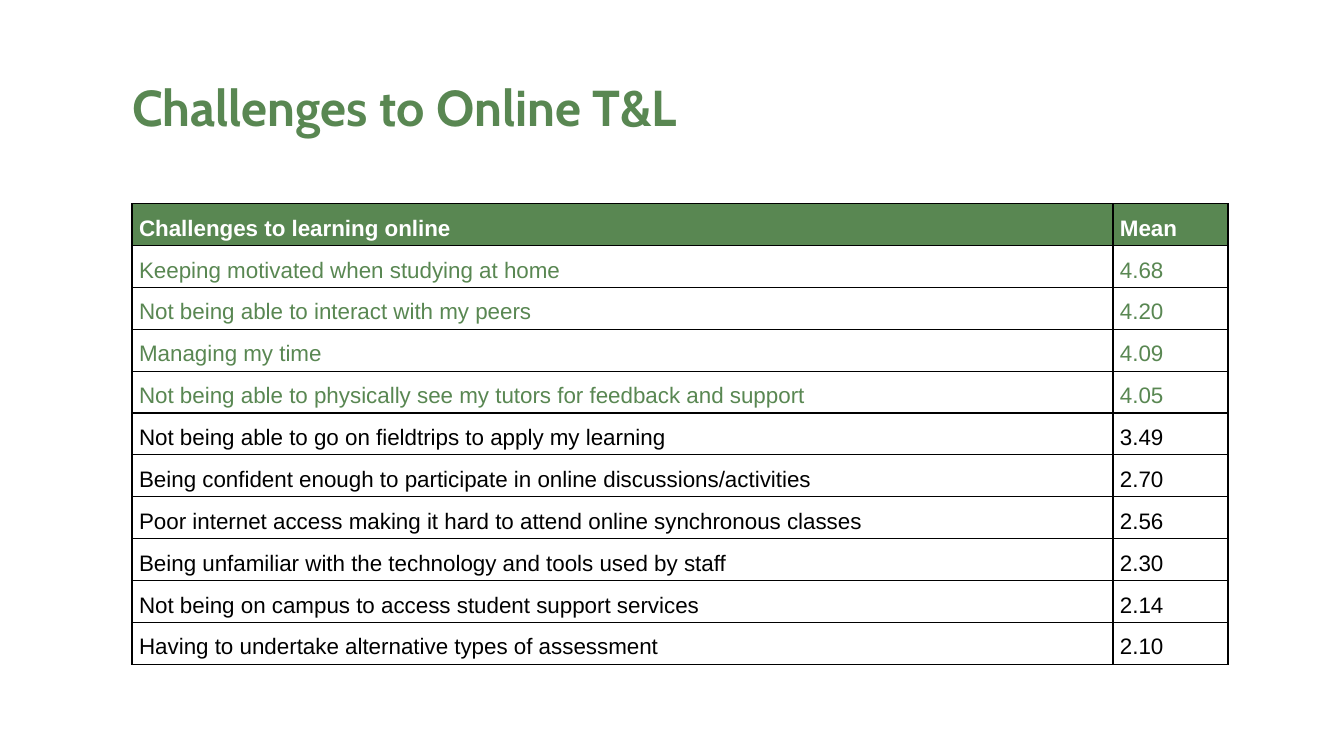
from lxml import etree
from pptx import Presentation, util as u
from pptx.dml.color import RGBColor
from pptx.enum import text
from pptx.oxml.ns import qn

COLORS = {"green": "598752", "white": "FFFFFF", "black": "000000"}
TITLE = "Challenges to Online T&L"
HEADER = ("Challenges to learning online", "Mean")
CHALLENGES = [
    ("Keeping motivated when studying at home", "4.68"),
    ("Not being able to interact with my peers", "4.20"),
    ("Managing my time", "4.09"),
    ("Not being able to physically see my tutors for feedback and support", "4.05"),
    ("Not being able to go on fieldtrips to apply my learning", "3.49"),
    ("Being confident enough to participate in online discussions/activities", "2.70"),
    ("Poor internet access making it hard to attend online synchronous classes", "2.56"),
    ("Being unfamiliar with the technology and tools used by staff", "2.30"),
    ("Not being on campus to access student support services", "2.14"),
    ("Having to undertake alternative types of assessment", "2.10"),
]
HIGHLIGHTED = 4
MEAN_SHARE = 0.105


def apply(obj, **values):
    for name, value in values.items():
        setattr(obj, name, value)


def style(font, color, **values):
    apply(font, **values)
    font.color.rgb = RGBColor.from_string(COLORS[color])


def add_title(s, left, top, width, height):
    sp = s.shapes.title
    apply(sp, left=left, top=top, width=width, height=height)
    tf = sp.text_frame
    apply(tf, margin_left=0, margin_top=0, margin_right=0, margin_bottom=0,
          word_wrap=True, vertical_anchor=text.MSO_ANCHOR.TOP,
          auto_size=text.MSO_AUTO_SIZE.NONE)
    p = tf.paragraphs[0]
    p.alignment = text.PP_ALIGN.LEFT
    r = p.add_run()
    r.text = TITLE
    style(r.font, "green", name="Cabin", size=u.Pt(36), bold=True)


def add_borders(cell):
    tcPr = cell._tc.get_or_add_tcPr()
    for i, side in enumerate(("lnL", "lnR", "lnT", "lnB")):
        ln = etree.Element(qn(f"a:{side}"), w=str(u.Pt(1)))
        fill = etree.SubElement(ln, qn("a:solidFill"))
        etree.SubElement(fill, qn("a:srgbClr"), val=COLORS["black"])
        tcPr.insert(i, ln)


def fill_cell(cell, words, color, header):
    apply(cell, margin_left=u.Inches(0.07), margin_right=u.Inches(0.07),
          margin_top=0, margin_bottom=0, vertical_anchor=text.MSO_ANCHOR.TOP)
    if header:
        cell.fill.solid()
        cell.fill.fore_color.rgb = RGBColor.from_string(COLORS["green"])
    else:
        cell.fill.background()
    add_borders(cell)
    p = cell.text_frame.paragraphs[0]
    p.line_spacing = 1.5
    r = p.add_run()
    r.text = words
    style(r.font, color, name="Arial", size=u.Pt(16), bold=header)


def add_challenges(s, left, top, width, height):
    rows = [HEADER] + CHALLENGES
    table = s.shapes.add_table(len(rows), len(HEADER), left, top, width, height).table
    table.horz_banding = False
    mean_width = int(width * MEAN_SHARE)
    for column, column_width in zip(table.columns, (width - mean_width, mean_width)):
        column.width = column_width
    for i, values in enumerate(rows):
        table.rows[i].height = height // len(rows)
        color = "white" if i == 0 else "green" if i <= HIGHLIGHTED else "black"
        for j, words in enumerate(values):
            fill_cell(table.cell(i, j), words, color, i == 0)


def main():
    prs = Presentation()
    apply(prs, slide_width=u.Inches(13.33), slide_height=u.Inches(7.5))
    s = prs.slides.add_slide(prs.slide_layouts[5])
    left, width = u.Inches(1.31), u.Inches(10.87)
    add_title(s, left, u.Inches(0.76), width, u.Inches(1.11))
    add_challenges(s, left, u.Inches(2.02), width, u.Inches(4.57))
    prs.save("out.pptx")


if __name__ == "__main__":
    main()
